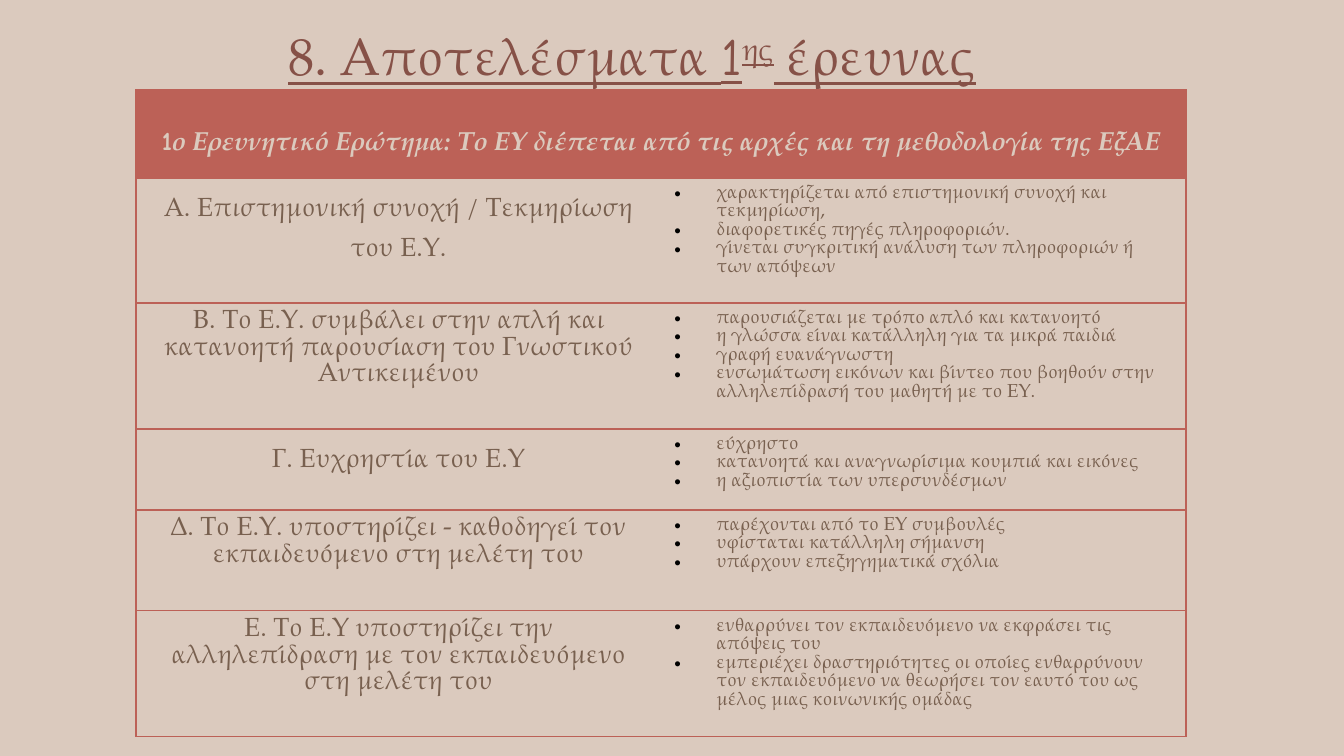
from dataclasses import dataclass

from lxml.etree import SubElement
from pptx import Presentation
from pptx.dml.color import RGBColor
from pptx.enum.text import MSO_ANCHOR as Anchor, MSO_AUTO_SIZE as AutoSize, PP_ALIGN as Align
from pptx.oxml.ns import qn
from pptx.util import Pt

EMU_PER_PX = 914400 / 134.4
SERIF, ROUNDED = "TeX Gyre Pagella", "Comic Neue"
SAND, BRICK, MAROON, BROWN, BLACK = "DBCABE", "BC6157", "865147", "78604F", "000000"
NO_GRID_STYLE = "{2D5ABB26-0587-4C30-8999-92F81FD0307C}"
HEADER_HEIGHT = 88
COLUMN_WIDTH = 525
BULLET_INDENT = 42


@dataclass
class Criterion:
    name: str
    findings: list[str]
    height: int
    line_spacing: float = 1.0


CRITERIA = [
    Criterion("Α. Επιστημονική συνοχή / Τεκμηρίωση του Ε.Υ.", [
        "χαρακτηρίζεται από επιστημονική συνοχή και τεκμηρίωση,",
        "διαφορετικές πηγές πληροφοριών.",
        "γίνεται συγκριτική ανάλυση των πληροφοριών ή των απόψεων",
    ], 125, 1.5),
    Criterion("Β. Το Ε.Υ. συμβάλει στην απλή και κατανοητή παρουσίαση του Γνωστικού Αντικειμένου", [
        "παρουσιάζεται με τρόπο απλό και κατανοητό",
        "η γλώσσα είναι κατάλληλη για τα μικρά παιδιά",
        "γραφή ευανάγνωστη",
        "ενσωμάτωση εικόνων και βίντεο που βοηθούν στην αλληλεπίδρασή του μαθητή με το ΕΥ.",
    ], 126),
    Criterion("Γ. Ευχρηστία του Ε.Υ", [
        "εύχρηστο",
        "κατανοητά και αναγνωρίσιμα κουμπιά και εικόνες",
        "η αξιοπιστία των υπερσυνδέσμων",
    ], 81, 1.5),
    Criterion("Δ. Το Ε.Υ. υποστηρίζει - καθοδηγεί τον εκπαιδευόμενο στη μελέτη του", [
        "παρέχονται από το ΕΥ συμβουλές",
        "υφίσταται κατάλληλη σήμανση",
        "υπάρχουν επεξηγηματικά σχόλια",
    ], 101),
    Criterion("Ε. Το Ε.Υ υποστηρίζει την αλληλεπίδραση με τον εκπαιδευόμενο στη μελέτη του", [
        "ενθαρρύνει τον εκπαιδευόμενο να εκφράσει τις απόψεις του",
        "εμπεριέχει δραστηριότητες οι οποίες ενθαρρύνουν τον εκπαιδευόμενο να θεωρήσει "
        "τον εαυτό του ως μέλος μιας κοινωνικής ομάδας",
    ], 126),
]


def px(length: int) -> int:
    return round(length * EMU_PER_PX)


def rgb(color: str) -> RGBColor:
    return RGBColor.from_string(color)


def add_span(para, text: str, size: int, color: str, font: str = SERIF,
             bold: bool = False, italic: bool = False):
    span = para.add_run()
    span.text = text
    span.font.name, span.font.size = font, Pt(size)
    span.font.bold, span.font.italic = bold, italic
    span.font.color.rgb = rgb(color)
    return span


def add_bullet(para) -> None:
    props = para._p.get_or_add_pPr()
    props.set("marL", str(px(BULLET_INDENT)))
    props.set("indent", str(-px(BULLET_INDENT)))
    SubElement(SubElement(props, qn("a:buClr")), qn("a:srgbClr"), val=BLACK)
    SubElement(props, qn("a:buFont"), typeface="Arial")
    SubElement(props, qn("a:buChar"), char="•")


def set_borders(cell, sides: str) -> None:
    """Draw the sides named by the letters L, R, T and B; clear the others."""
    props = cell._tc.get_or_add_tcPr()
    for side in "LRTB":
        line = SubElement(props, qn(f"a:ln{side}"), w=str(Pt(0.75)))
        if side in sides:
            SubElement(SubElement(line, qn("a:solidFill")), qn("a:srgbClr"), val=BRICK)
        else:
            SubElement(line, qn("a:noFill"))


def add_title(page) -> None:
    box = page.shapes.title
    box.left, box.top, box.width, box.height = px(275), px(17), px(792), px(77)
    frame = box.text_frame
    frame.word_wrap = True
    frame.auto_size = AutoSize.NONE
    frame.vertical_anchor = Anchor.TOP
    para = frame.paragraphs[0]
    para.alignment = Align.LEFT
    for text, font in (("8. Αποτελέσματα ", SERIF), ("1", ROUNDED),
                       ("ης", SERIF), (" έρευνας", SERIF)):
        span = add_span(para, text, 28, MAROON, font)
        span.font.underline = True
        if text == "ης":
            span.font._element.set("baseline", "30000")


def fill_header(table) -> None:
    cell = table.cell(0, 0)
    cell.merge(table.cell(0, 1))
    for part in table.rows[0].cells:
        set_borders(part, "LRTB")
        part.fill.solid()
        part.fill.fore_color.rgb = rgb(BRICK)
    para = cell.text_frame.paragraphs[0]
    para.alignment = Align.CENTER
    para.line_spacing = 2.0
    add_span(para, "1", 14, SAND, ROUNDED, bold=True)
    add_span(para, "ο Ερευνητικό Ερώτημα: Το ΕΥ διέπεται από τις αρχές και τη μεθοδολογία της ΕξΑΕ",
             14, SAND, bold=True, italic=True)


def fill_criterion(row, criterion: Criterion) -> None:
    name_cell, findings_cell = row.cells
    for cell, sides in ((name_cell, "LTB"), (findings_cell, "RTB")):
        set_borders(cell, sides)
        cell.fill.background()
    para = name_cell.text_frame.paragraphs[0]
    para.alignment = Align.CENTER
    para.line_spacing = criterion.line_spacing
    add_span(para, criterion.name, 14, BROWN)
    frame = findings_cell.text_frame
    for index, finding in enumerate(criterion.findings):
        para = frame.add_paragraph() if index else frame.paragraphs[0]
        add_bullet(para)
        add_span(para, finding, 10, BROWN)


def add_results(page) -> None:
    heights = [HEADER_HEIGHT] + [criterion.height for criterion in CRITERIA]
    table = page.shapes.add_table(len(heights), 2, px(136), px(90),
                                  px(2 * COLUMN_WIDTH), px(sum(heights))).table
    table.first_row = table.horz_banding = False
    table._tbl.tblPr.find(qn("a:tableStyleId")).text = NO_GRID_STYLE
    for column in table.columns:
        column.width = px(COLUMN_WIDTH)
    for row, height in zip(table.rows, heights):
        row.height = px(height)
    fill_header(table)
    for index, criterion in enumerate(CRITERIA, start=1):
        fill_criterion(table.rows[index], criterion)


def main() -> None:
    deck = Presentation()
    deck.slide_width, deck.slide_height = px(1344), px(756)
    page = deck.slides.add_slide(deck.slide_layouts[5])
    page.background.fill.solid()
    page.background.fill.fore_color.rgb = rgb(SAND)
    add_title(page)
    add_results(page)
    deck.save("out.pptx")


if __name__ == "__main__":
    main()
